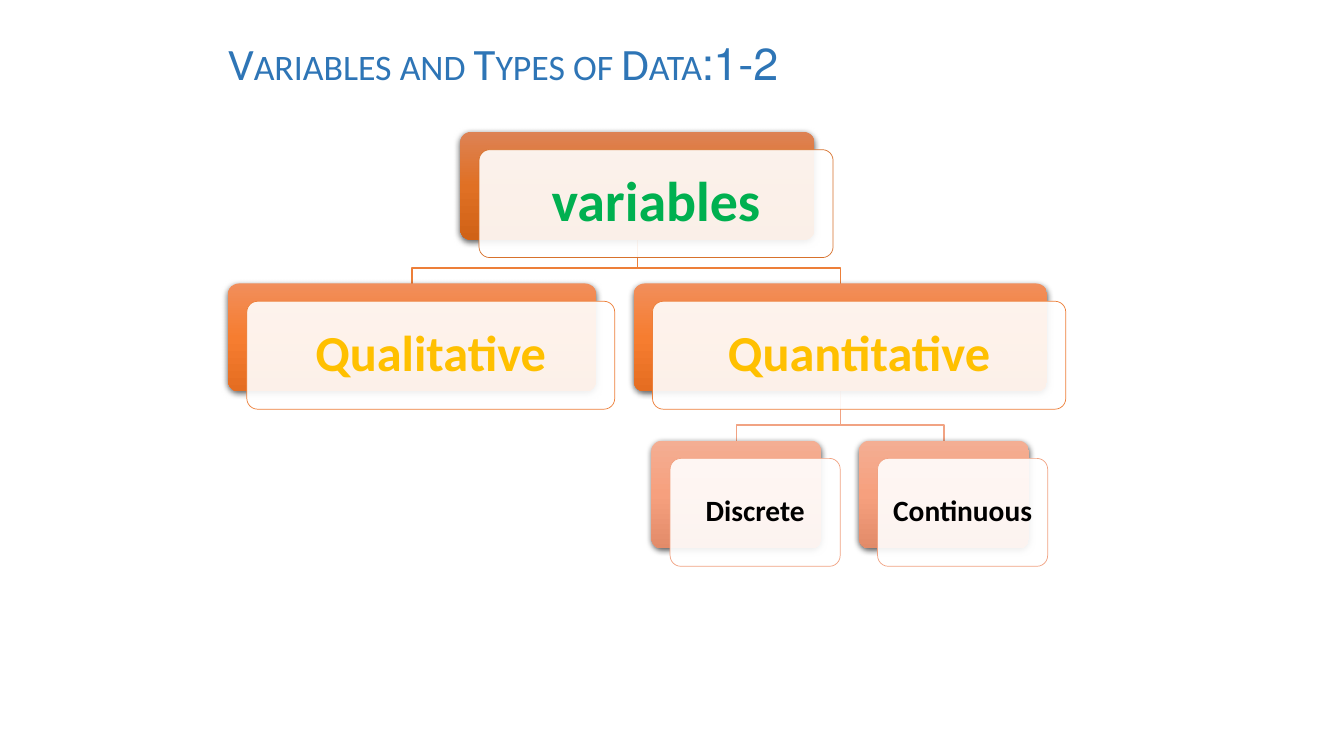
from dataclasses import dataclass

from pptx import Presentation
from pptx.dml.color import RGBColor
from pptx.enum.shapes import MSO_SHAPE
from pptx.enum.text import MSO_ANCHOR, PP_ALIGN
from pptx.oxml import parse_xml
from pptx.oxml.ns import nsdecls, qn
from pptx.shapes.autoshape import Shape
from pptx.shapes.shapetree import SlideShapes
from pptx.text.text import TextFrame
from pptx.util import Inches, Pt

ROUND = MSO_SHAPE.ROUNDED_RECTANGLE
MIDDLE, TOP = MSO_ANCHOR.MIDDLE, MSO_ANCHOR.TOP
LEFT, CENTER = PP_ALIGN.LEFT, PP_ALIGN.CENTER

WIDE, HIGH = Inches(13.333), Inches(7.5)
COLS, ROWS = 160, 90
FONT = "Calibri"

WHITE = RGBColor(0xFF, 0xFF, 0xFF)
BLACK = RGBColor(0x00, 0x00, 0x00)
BLUE = RGBColor(0x2E, 0x75, 0xB6)
GREEN = RGBColor(0x00, 0xB0, 0x50)
GOLD = RGBColor(0xFF, 0xC0, 0x00)
RUST = RGBColor(0xD7, 0x71, 0x2C)
ORANGE = RGBColor(0xED, 0x7F, 0x39)
PEACH = RGBColor(0xF1, 0xA3, 0x83)
RUST_FADE = (RGBColor(0xDD, 0x82, 0x54), RGBColor(0xE0, 0x70, 0x24), RGBColor(0xD0, 0x62, 0x16))
ORANGE_FADE = (RGBColor(0xF1, 0x8E, 0x5B), RGBColor(0xF6, 0x7D, 0x30), RGBColor(0xE5, 0x6D, 0x21))
PEACH_FADE = (RGBColor(0xF4, 0xAE, 0x93), RGBColor(0xF6, 0xA0, 0x7E), RGBColor(0xE2, 0x8B, 0x69))

BOX_ROWS = 12.85
SHIFT_COLS, SHIFT_ROWS = 2.23, 2.12
BEND_ROWS = 1.85


@dataclass(frozen=True)
class Level:
    row: float
    fade: tuple[RGBColor, RGBColor, RGBColor]
    edge: RGBColor
    ink: RGBColor
    size: int
    inset: float


@dataclass(frozen=True)
class Node:
    text: str
    level: Level
    col: float
    span: float

    @property
    def mid(self) -> float:
        return self.col + self.span / 2


@dataclass(frozen=True)
class Link:
    upper: Node
    lower: Node


ROOT = Level(15.7, RUST_FADE, RUST, GREEN, 40, 0.2)
KIND = Level(33.75, ORANGE_FADE, ORANGE, GOLD, 36, 0.18)
LEAF = Level(52.45, PEACH_FADE, PEACH, BLACK, 21, 0.12)

TOTAL = Node("variables", ROOT, 54.8, 42.15)
QUAL = Node("Qualitative", KIND, 27.15, 43.8)
QUANT = Node("Quantitative", KIND, 75.45, 49.2)
WHOLE = Node("Discrete", LEAF, 77.55, 20.25)
SMOOTH = Node("Continuous", LEAF, 102.25, 20.25)

NODES = (TOTAL, QUAL, QUANT, WHOLE, SMOOTH)
LINKS = (Link(QUANT, SMOOTH), Link(QUANT, WHOLE), Link(TOTAL, QUANT), Link(TOTAL, QUAL))


def across(cols: float) -> int:
    return round(WIDE * cols / COLS)


def down(rows: float) -> int:
    return round(HIGH * rows / ROWS)


def write(frame: TextFrame, text: str, size: int, ink: RGBColor, align: PP_ALIGN):
    frame.word_wrap = True
    para = frame.paragraphs[0]
    para.alignment = align
    para._p.get_or_add_pPr().set("rtl", "1")
    run = para.add_run()
    run.text = text
    run.font.name = FONT
    run.font.size = Pt(size)
    run.font.color.rgb = ink
    return para, run


def draw_title(shapes: SlideShapes) -> None:
    box = shapes.add_textbox(across(26), down(3.6), across(98), down(15))
    box.text_frame.vertical_anchor = TOP
    _, run = write(box.text_frame, "1-2:Variables and Types of Data", 32, BLUE, LEFT)
    run.font._element.set("cap", "small")


def draw_link(shapes: SlideShapes, link: Link) -> None:
    start = across(link.upper.mid), down(link.upper.level.row + BOX_ROWS)
    end = across(link.lower.mid), down(link.lower.level.row)
    bend = down(link.lower.level.row - BEND_ROWS)
    path = shapes.build_freeform(*start)
    path.add_line_segments([(start[0], bend), (end[0], bend), end], close=False)
    elbow = path.convert_to_shape()
    elbow.shadow.inherit = False
    elbow.fill.background()
    elbow.line.color.rgb = link.lower.level.edge if link.lower.level is LEAF else ORANGE
    elbow.line.width = Pt(1)


def add_card(shapes: SlideShapes, node: Node, dx: float, dy: float) -> Shape:
    card = shapes.add_shape(
        ROUND, across(node.col + dx), down(node.level.row + dy), across(node.span), down(BOX_ROWS)
    )
    card.adjustments[0] = 0.1
    card.shadow.inherit = False
    return card


def shade(card: Shape, fade: tuple[RGBColor, RGBColor, RGBColor]) -> None:
    stops = "".join(
        f'<a:gs pos="{place * 50000}"><a:srgbClr val="{tint}"/></a:gs>'
        for place, tint in enumerate(fade)
    )
    props = card.element.spPr
    geom = props.find(qn("a:prstGeom"))
    geom.addnext(parse_xml(
        f'<a:gradFill {nsdecls("a")} rotWithShape="1"><a:gsLst>{stops}</a:gsLst>'
        '<a:lin ang="5400000" scaled="0"/></a:gradFill>'
    ))
    props.find(qn("a:effectLst")).append(parse_xml(
        f'<a:outerShdw {nsdecls("a")} blurRad="{Pt(4.5)}" dist="{Pt(1.5)}" dir="5400000" '
        'algn="ctr" rotWithShape="0"><a:srgbClr val="000000"><a:alpha val="63000"/>'
        '</a:srgbClr></a:outerShdw>'
    ))


def draw_node(shapes: SlideShapes, node: Node) -> None:
    level = node.level
    back = add_card(shapes, node, 0, 0)
    back.line.fill.background()
    shade(back, level.fade)

    face = add_card(shapes, node, SHIFT_COLS, SHIFT_ROWS)
    face.fill.solid()
    face.fill.fore_color.rgb = WHITE
    tint = face.element.spPr.find(qn("a:solidFill")).find(qn("a:srgbClr"))
    tint.append(parse_xml(f'<a:alpha {nsdecls("a")} val="90000"/>'))
    face.line.color.rgb = level.edge
    face.line.width = Pt(0.5)

    frame = face.text_frame
    frame.vertical_anchor = MIDDLE
    frame.margin_left = frame.margin_right = Inches(level.inset)
    frame.margin_top = frame.margin_bottom = Inches(level.inset)
    para, run = write(frame, node.text, level.size, level.ink, CENTER)
    para.line_spacing = 0.9
    run.font.bold = True


def main() -> None:
    deck = Presentation()
    deck.slide_width, deck.slide_height = WIDE, HIGH
    shapes = deck.slides.add_slide(deck.slide_layouts[6]).shapes
    draw_title(shapes)
    for link in LINKS:
        draw_link(shapes, link)
    for node in NODES:
        draw_node(shapes, node)
    deck.save("out.pptx")


if __name__ == "__main__":
    main()
